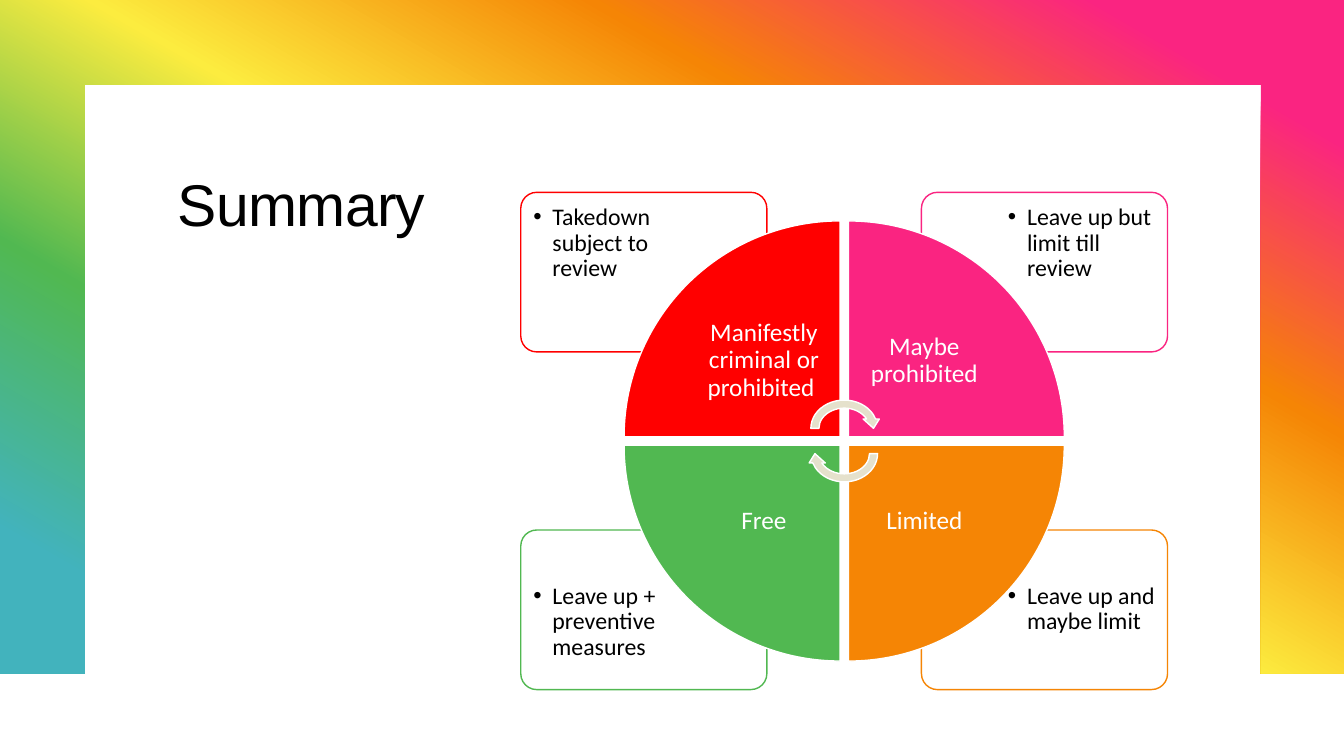
from dataclasses import dataclass

from lxml import etree
from pptx import Presentation
from pptx import util as u
from pptx.dml.color import RGBColor
from pptx.enum import shapes, text
from pptx.oxml.ns import qn

SHAPE = shapes.MSO_SHAPE


@dataclass(frozen=True)
class Theme:
    red: str = "FF0000"
    pink: str = "FA2481"
    orange: str = "F58505"
    yellow: str = "FCEC3F"
    green: str = "51B851"
    blue: str = "42B3BD"
    sand: str = "E5E1CC"
    white: str = "FFFFFF"
    black: str = "000000"
    title_font: str = "Arial"
    body_font: str = "Calibri"
    title_size: int = 42
    label_size: int = 18
    note_size: int = 17


class Deck:
    """Places elements on a grid of 16 columns and 9 rows."""

    def __init__(self, theme):
        self.theme = theme
        self.prs = Presentation()
        self.prs.slide_width, self.prs.slide_height = u.Inches(13.33), u.Inches(7.5)
        self.col, self.row = self.prs.slide_width / 16, self.prs.slide_height / 9
        self.s = self.prs.slides.add_slide(self.prs.slide_layouts[6])

    def emu(self, x, y):
        return round(x * self.col), round(y * self.row)

    def frame(self, points, stops, angle):
        pts = [self.emu(*pt) for pt in points]
        builder = self.s.shapes.build_freeform(*pts[0])
        builder.add_line_segments(pts[1:], close=True)
        sp = builder.convert_to_shape()
        sp.shadow.inherit = False
        sp.line.fill.background()
        sp.fill.gradient()
        sp.fill.gradient_angle = 360 - angle
        stop_list = sp._element.spPr.find(qn("a:gradFill")).find(qn("a:gsLst"))
        for old in list(stop_list):
            stop_list.remove(old)
        for pos, color in stops:
            gs = etree.SubElement(stop_list, qn("a:gs"), pos=str(pos * 1000))
            etree.SubElement(gs, qn("a:srgbClr"), val=color)

    def shape(self, kind, box, fill, line, rotation=0, radius=None, alpha=None):
        sp = self.s.shapes.add_shape(kind, *self.emu(*box[:2]), *self.emu(*box[2:]))
        sp.shadow.inherit = False
        sp.rotation = rotation
        sp.fill.solid()
        sp.fill.fore_color.rgb = RGBColor.from_string(fill)
        sp.line.color.rgb = RGBColor.from_string(line)
        sp.line.width = u.Pt(1)
        if radius is not None:
            sp.adjustments[0] = radius
        if alpha is not None:
            color = sp._element.spPr.find(qn("a:solidFill"))[0]
            etree.SubElement(color, qn("a:alpha"), val=str(alpha * 1000))

    def text(self, box, words, font, color, para, inset=None, bullet=False,
             anchor=text.MSO_ANCHOR.TOP, spacing=None):
        sp = self.s.shapes.add_textbox(*self.emu(*box[:2]), *self.emu(*box[2:]))
        tf = sp.text_frame
        frame_format = {"word_wrap": True, "vertical_anchor": anchor}
        if inset is not None:
            for side in ("left", "top", "right", "bottom"):
                frame_format[f"margin_{side}"] = u.Inches(inset)
        p = tf.paragraphs[0]
        if bullet:
            pPr = p._p.get_or_add_pPr()
            indent = u.Inches(0.19)
            pPr.set("marL", str(indent))
            pPr.set("indent", str(-indent))
            etree.SubElement(pPr, qn("a:buFont"), typeface="Arial")
            etree.SubElement(pPr, qn("a:buChar"), char="•")
        r = p.add_run()
        r.text = words
        for target, formats in ((tf, frame_format), (p, para), (r.font, font)):
            for name, value in formats.items():
                setattr(target, name, value)
        r.font.color.rgb = RGBColor.from_string(color)
        if spacing is not None:
            r._r.get_or_add_rPr().set("spc", str(round(spacing * 100)))


def main():
    t = Theme()
    d = Deck(t)

    # Rainbow frame around the page
    near, far, base = 1.01, 15.01, 8.02
    d.frame([(0, 0), (16, 0), (16, base), (far, base), (far, near),
             (near, near), (near, base), (0, base)],
            [(10, t.pink), (30, t.orange), (50, t.yellow), (70, t.green), (90, t.blue)],
            angle=120)

    # Title
    d.text((2, 2, 12, 1.76), "Summary",
           {"name": t.title_font, "size": u.Pt(t.title_size)}, t.black,
           {"line_spacing": 0.95}, spacing=-0.5)

    # Quadrants, clockwise from top left: side, level, colour, label, note
    quadrants = [
        (-1, -1, t.red, "Manifestly criminal or prohibited ", "Takedown subject to review"),
        (1, -1, t.pink, "Maybe prohibited", "Leave up but limit till review"),
        (1, 1, t.orange, "Limited", "Leave up and maybe limit"),
        (-1, 1, t.green, "Free", "Leave up + preventive measures"),
    ]
    cx, cy = 10.05, 5.25
    gap, wedge, label = 0.05, 2.57, 1.81
    reach_x, reach_y, card_w, card_h = 3.85, 2.96, 2.93, 1.9
    pad, note_w, note_h = 0.04, 1.97, 1.33

    def mirrored(side, level, dx, dy, w, h):
        """Box whose nearest corner lies dx, dy from the wheel's centre."""
        return (cx + side * (dx + w / 2) - w / 2,
                cy + level * (dy + h / 2) - h / 2, w, h)

    # Corner cards and their notes
    for side, level, color, _, note in quadrants:
        d.shape(SHAPE.ROUNDED_RECTANGLE,
                mirrored(side, level, reach_x - card_w, reach_y - card_h, card_w, card_h),
                t.white, color, radius=0.1, alpha=90)
        d.text(mirrored(side, level, reach_x - pad - note_w, reach_y - pad - note_h,
                        note_w, note_h),
               note, {"name": t.body_font, "size": u.Pt(t.note_size)}, t.black,
               {"level": 1, "line_spacing": 0.9}, inset=0.09, bullet=True)

    # Wheel of four wedges
    for i, (side, level, color, name, _) in enumerate(quadrants):
        d.shape(SHAPE.PIE_WEDGE, mirrored(side, level, gap, gap, wedge, wedge),
                color, t.white, rotation=90 * i)
        d.text(mirrored(side, level, gap, gap, label, label), name,
               {"name": t.body_font, "size": u.Pt(t.label_size)}, t.white,
               {"alignment": text.PP_ALIGN.CENTER, "line_spacing": 0.9},
               inset=0.14, anchor=text.MSO_ANCHOR.MIDDLE)

    # Cycle arrows at the hub
    arrow_w, arrow_h, shift = 0.89, 0.77, 0.15
    for level, rotation in ((-1, 0), (1, 180)):
        d.shape(SHAPE.CIRCULAR_ARROW,
                (cx - arrow_w / 2, cy + level * shift - arrow_h / 2, arrow_w, arrow_h),
                t.sand, t.white, rotation=rotation)

    d.prs.save("out.pptx")


if __name__ == "__main__":
    main()
